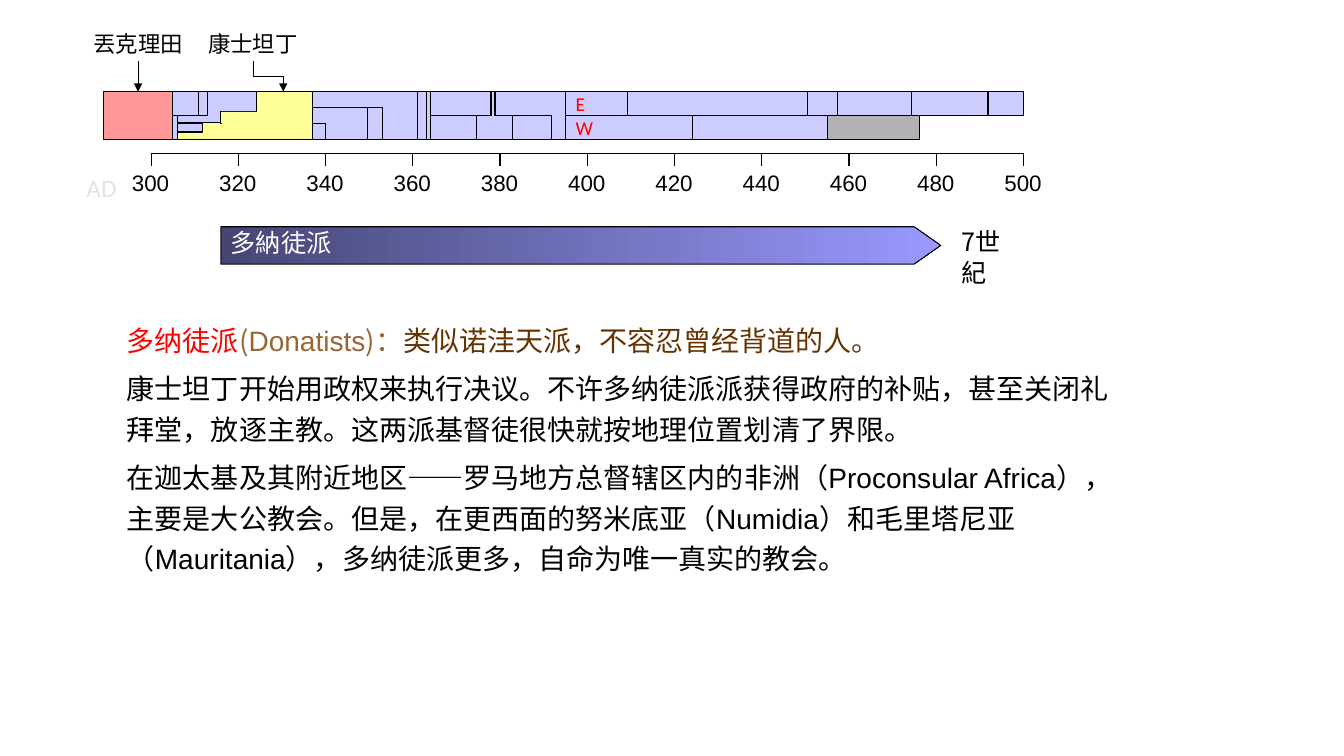
from lxml.etree import SubElement
from pptx import Presentation
from pptx.dml.color import RGBColor
from pptx.enum.shapes import MSO_CONNECTOR, MSO_SHAPE
from pptx.enum.text import MSO_ANCHOR, PP_ALIGN
from pptx.oxml.ns import qn
from pptx.util import Pt

PX = 9144  # 100 px to the inch
HUES = {
    "black": "000000", "white": "FFFFFF", "lilac": "CCCCFF", "pink": "FF9999",
    "yellow": "FFFF99", "gray": "B2B2B2", "red": "FF0000", "pale": "E3E3E3",
    "tan": "996633", "brown": "663300", "dusk": "464675", "violet": "9999FF",
}
RGB = {name: RGBColor.from_string(code) for name, code in HUES.items()}
SANS = "Noto Sans CJK SC"

deck = Presentation()
deck.slide_width, deck.slide_height = 1333 * PX, 750 * PX
slide = deck.slides.add_slide(deck.slide_layouts[6])
shapes = slide.shapes


def style(part, face, size, hue):
    """Set the font of a paragraph or a run."""
    part.font.name, part.font.size = face, Pt(size)
    part.font.color.rgb = RGB[hue]


def put(kind, left, top, wide, high, hue, edge=True):
    """Add a filled shape with a thin black edge, or none."""
    shape = shapes.add_shape(kind, left * PX, top * PX, wide * PX, high * PX)
    shape.shadow.inherit = False
    shape.fill.solid()
    shape.fill.fore_color.rgb = RGB[hue]
    if edge:
        shape.line.color.rgb = RGB["black"]
        shape.line.width = Pt(0.75)
    else:
        shape.line.fill.background()
    return shape


# Reigns: left, top, width, height, hue, edge, text; later ones lie in front
TOP, MID, LOW = 91, 115, 138
EAST, WEST, FULL = MID - TOP, LOW - MID, LOW - TOP
reigns = [
    (821, MID, 91, WEST, "gray", True, ""),
    (686, MID, 135, WEST, "lilac", True, ""),
    (171, MID, 5, WEST, "lilac", True, ""),
    (103, TOP, 68, FULL, "pink", True, ""),
    (310, TOP, 104, FULL, "lilac", True, ""),
    (414, TOP, 9, FULL, "lilac", True, ""),
    (423, TOP, 4, FULL, "lilac", True, ""),
    (561, MID, 126, WEST, "lilac", True, "W"),
    (176, TOP, 134, FULL, "yellow", True, ""),
    (176, 123, 25, 8, "lilac", True, ""),
    (176, TOP, 78, 31, "lilac", True, ""),
    (197, TOP, 9, EAST, "lilac", True, ""),
    (171, TOP, 26, EAST, "lilac", True, ""),
    (561, TOP, 61, EAST, "lilac", True, "E"),
    (622, TOP, 179, EAST, "lilac", True, ""),
    (801, TOP, 30, EAST, "lilac", True, ""),
    (831, TOP, 73, EAST, "lilac", True, ""),
    (904, TOP, 76, EAST, "lilac", True, ""),
    (980, TOP, 35, EAST, "lilac", True, ""),
    (219, 111, 35, 12, "yellow", True, ""),
    (220, 111, 35, 12, "yellow", False, ""),
    (427, TOP, 60, EAST, "lilac", True, ""),
    (427, MID, 46, WEST, "lilac", True, ""),
    (491, TOP, 70, FULL, "lilac", True, ""),
    (473, MID, 35, WEST, "lilac", True, ""),
    (487, TOP, 4, EAST, "lilac", True, ""),
    (488, 109, 2, 8, "lilac", False, ""),
    (508, MID, 39, WEST, "lilac", True, ""),
    (310, 107, 55, 31, "lilac", True, ""),
    (365, 107, 14, 31, "lilac", True, ""),
    (310, 123, 13, 15, "lilac", True, ""),
]
for left, top, wide, high, hue, edge, text in reigns:
    bar = put(MSO_SHAPE.RECTANGLE, left, top, wide, high, hue, edge)
    if hue == "pink":
        first = bar
    if text:
        frame = bar.text_frame
        frame.vertical_anchor = MSO_ANCHOR.MIDDLE
        line = frame.paragraphs[0]
        line.text, line.alignment = text, PP_ALIGN.LEFT
        style(line, "Calibri", 14, "red")

# Time axis: a ruled table for the ticks, with the years laid over its lower part
ticks = [""] * 10
years = [str(year) for year in range(300, 501, 20)]
axes = [
    (ticks, 150, 152, 865, 40, "black", ("lnL", "lnR", "lnT", "lnB")),
    (years, 106, 165, 952, 37, "white", ("lnT", "lnB")),
]
for words, left, top, wide, high, hue, sides in axes:
    table = shapes.add_table(1, len(words), left * PX, top * PX, wide * PX, high * PX).table
    table.first_row = table.horz_banding = False
    for col, word in enumerate(words):
        table.columns[col].width = wide * PX // len(words)
        cell = table.cell(0, col)
        props = cell._tc.get_or_add_tcPr()
        for side in ("lnL", "lnR", "lnT", "lnB"):
            rule = SubElement(props, qn("a:" + side), w=str(Pt(1)))
            if side in sides:
                paint = SubElement(rule, qn("a:solidFill"))
                SubElement(paint, qn("a:srgbClr"), val=HUES[hue])
            else:
                SubElement(rule, qn("a:noFill"))
        if word:
            cell.fill.solid()
            cell.fill.fore_color.rgb = RGB["white"]
            line = cell.text_frame.paragraphs[0]
            line.text, line.alignment = word, PP_ALIGN.CENTER
            style(line, "Arial", 16, "black")
        else:
            cell.fill.background()

# Donatist span
span = put(MSO_SHAPE.PENTAGON, 219, 225, 714, 37, "violet")
span.adjustments[0] = 0.71
span.fill.gradient()
span.fill.gradient_angle = 0
for stop, hue in zip(span.fill.gradient_stops, ("dusk", "violet")):
    stop.color.rgb = RGB[hue]
span.text_frame.vertical_anchor = MSO_ANCHOR.TOP
line = span.text_frame.paragraphs[0]
line.text, line.alignment, line.line_spacing = "多納徒派", PP_ALIGN.LEFT, 0.85
style(line, "Calibri", 18, "white")

# Labels: text, left, top, width, height, face, size, hue
labels = [
    ("7世紀", 944, 220, 83, 40, SANS, 18, "black"),
    ("AD", 76, 166, 50, 40, "Calibri", 18, "pale"),
    ("丟克理田", 87, 26, 100, 35, "Calibri", 16, "black"),
    ("康士坦丁", 201, 26, 100, 35, "Calibri", 16, "black"),
]
boxes = {}
for text, left, top, wide, high, face, size, hue in labels:
    box = shapes.add_textbox(left * PX, top * PX, wide * PX, high * PX)
    boxes[text] = box
    frame = box.text_frame
    frame.word_wrap = True
    line = frame.paragraphs[0]
    line.text = text
    style(line, face, size, hue)
    if size == 16:
        frame.margin_left = frame.margin_right = 0
        frame.vertical_anchor = MSO_ANCHOR.MIDDLE
        line.alignment = PP_ALIGN.CENTER

# Arrows from the two emperors to their reigns
drop = shapes.add_connector(MSO_CONNECTOR.STRAIGHT, 137 * PX, 61 * PX, 137 * PX, 91 * PX)
drop.begin_connect(boxes["丟克理田"], 2)
drop.end_connect(first, 0)
bend = shapes.add_connector(MSO_CONNECTOR.ELBOW, 251 * PX, 61 * PX, 281 * PX, 91 * PX)
turn = bend._element.spPr.find(qn("a:xfrm"))
turn.set("rot", str(270 * 60000))
turn.set("flipH", "1")
for link in (drop, bend):
    link.line.color.rgb = RGB["black"]
    link.line.width = Pt(0.75)
    props = link._element.spPr
    SubElement(props.find(qn("a:ln")), qn("a:tailEnd"), type="triangle")
    SubElement(props, qn("a:effectLst"))

# Account of the Donatists
story = [
    [("多纳徒派", SANS, "red"), ("(", SANS, "tan"), ("Donatists", "Arial", "tan"),
     (")：", SANS, "tan"), ("类似诺洼天派，不容忍曾经背道的人。", SANS, "brown")],
    [("康士坦丁开始用政权来执行决议。不许多纳徒派派获得政府的补贴，甚至关闭礼拜堂"
      "，放逐主教。这两派基督徒很快就按地理位置划清了界限。", "Arial", "black")],
    [("在迦太基及其附近地区——罗马地方总督辖区内的非洲（Proconsular Africa），"
      "主要是大公教会。但是，在更西面的努米底亚（Numidia）和毛里塔尼亚（Mauritania），"
      "多纳徒派更多，自命为唯一真实的教会。", "Arial", "black")],
]
frame = shapes.add_textbox(116 * PX, 309 * PX, 1016 * PX, 269 * PX).text_frame
frame.word_wrap = True
for row, parts in enumerate(story):
    line = frame.add_paragraph() if row else frame.paragraphs[0]
    line.line_spacing, line.space_after = 1.2, Pt(6)
    if len(parts) == 1:
        text, face, hue = parts[0]
        line.text = text
        style(line, face, 20, hue)
        continue
    for text, face, hue in parts:
        run = line.add_run()
        run.text = text
        style(run, face, 20, hue)

deck.save("out.pptx")
